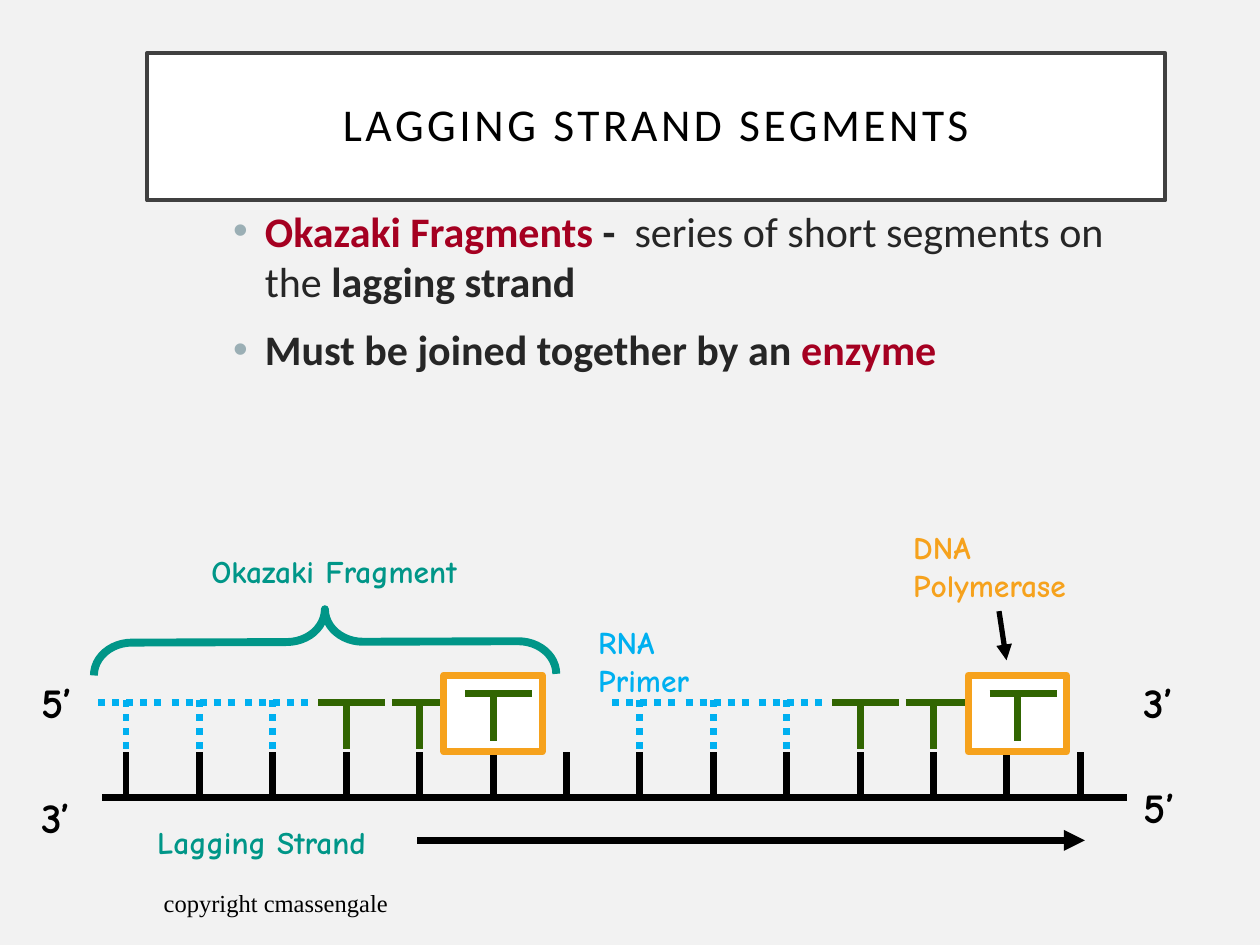
import pptx
import pptx.dml.color
import pptx.enum.dml
import pptx.enum.shapes
import pptx.enum.text
import pptx.oxml
import pptx.oxml.ns
import pptx.util
from pptx.util import Cm

BLACK, WHITE, GREY = "000000", "FFFFFF", "262626"
RED, TEAL, BLUE, GREEN, ORANGE = "A50021", "009688", "00B0F0", "316501", "F6A21D"
PITCH = 1.48  # distance between neighbouring bases, cm
BASES = 14
SHAPES = pptx.enum.shapes.MSO_SHAPE
ANCHOR = pptx.enum.text.MSO_ANCHOR


def rgb(color):
    return pptx.dml.color.RGBColor.from_string(color)


def add_child(parent, tag, **attributes):
    child = pptx.oxml.parse_xml(f"<{tag} {pptx.oxml.ns.nsdecls('a')}/>")
    for name, value in attributes.items():
        child.set(name, value)
    parent.append(child)
    return child


def add_span(para, text, size=18, font="Comic Neue", color=BLACK, bold=False, spacing=None):
    span = para.add_run()
    span.text = text
    span.font.size = pptx.util.Pt(size)
    span.font.name = font
    span.font.bold = bold
    span.font.color.rgb = rgb(color)
    if spacing:
        span.font._element.set("spc", str(spacing))


def add_box(page, left, top, width, height, wrap=True, anchor=ANCHOR.TOP):
    box = page.shapes.add_textbox(Cm(left), Cm(top), Cm(width), Cm(height))
    box.text_frame.word_wrap = wrap
    box.text_frame.vertical_anchor = anchor
    return box


def add_label(page, left, top, width, height, lines, **style):
    frame = add_box(page, left, top, width, height, wrap=False).text_frame
    frame.auto_size = pptx.enum.text.MSO_AUTO_SIZE.SHAPE_TO_FIT_TEXT
    for index, line in enumerate(lines):
        para = frame.add_paragraph() if index else frame.paragraphs[0]
        add_span(para, line, bold=True, **style)


def add_shape(page, kind, left, top, width, height, line, weight, fill=None):
    shape = page.shapes.add_shape(kind, Cm(left), Cm(top), Cm(width), Cm(height))
    shape.shadow.inherit = False
    shape.line.color.rgb = rgb(line)
    shape.line.width = pptx.util.Pt(weight)
    if fill:
        shape.fill.solid()
        shape.fill.fore_color.rgb = rgb(fill)
    else:
        shape.fill.background()
    return shape


def add_line(page, x1, y1, x2, y2, color=BLACK, weight=4, dotted=False, arrow=False):
    line = page.shapes.add_connector(
        pptx.enum.shapes.MSO_CONNECTOR.STRAIGHT, Cm(x1), Cm(y1), Cm(x2), Cm(y2))
    line.line.color.rgb = rgb(color)
    line.line.width = pptx.util.Pt(weight)
    if dotted:
        line.line.dash_style = pptx.enum.dml.MSO_LINE.ROUND_DOT
    if arrow:
        add_child(line.line._get_or_add_ln(), "a:tailEnd", type="triangle")
    add_child(line._element.spPr, "a:effectLst")


def add_title(page, left, top, width, height):
    box = add_shape(page, SHAPES.RECTANGLE, left, top, width, height, "404040", 2.5, WHITE)
    box.text_frame.vertical_anchor = ANCHOR.MIDDLE
    para = box.text_frame.paragraphs[0]
    para.alignment = pptx.enum.text.PP_ALIGN.CENTER
    para.line_spacing = 0.9
    add_span(para, "LAGGING STRAND SEGMENTS", size=26, font="Calibri", spacing=200)


def add_bullets(page, left, top, width, height):
    items = [
        [("Okazaki Fragments", RED, True), (" -", GREY, True),
         ("  series of short segments on the ", GREY, False), ("lagging strand", GREY, True)],
        [("Must be joined together by an ", GREY, True), ("enzyme", RED, True)],
    ]
    frame = add_box(page, left, top, width, height).text_frame
    for index, item in enumerate(items):
        para = frame.add_paragraph() if index else frame.paragraphs[0]
        para.space_before = pptx.util.Pt(10)
        properties = para._p.get_or_add_pPr()
        properties.set("marL", str(Cm(0.64)))
        properties.set("indent", str(-Cm(0.64)))
        add_child(add_child(properties, "a:buClr"), "a:srgbClr", val="9BAFB5")
        add_child(properties, "a:buFont", typeface="Arial")
        add_child(properties, "a:buChar", char="•")
        for text, color, bold in item:
            add_span(para, text, size=24, font="Calibri", color=color, bold=bold)


def add_template(page, left, top, width):
    """Template strand with its bases and the direction arrow below."""
    backbone = top + 0.92
    for index in range(BASES):
        x = left + 0.48 + index * PITCH
        add_line(page, x, top, x, top + 0.99)
    add_line(page, left, backbone, left + width, backbone)
    add_line(page, left + 6.35, top + 1.78, left + 19.81, top + 1.78, arrow=True)


def add_base(page, x, top, color, dotted=False):
    """T-shaped nucleotide centred on x."""
    add_line(page, x, top, x, top + 0.98, color, dotted=dotted)
    add_line(page, x - 0.56, top + 0.04, x + 0.79, top + 0.04, color, dotted=dotted)


def add_fragment(page, left, top, shift=0):
    """Three primer bases, two DNA bases, then polymerase holding a base."""
    centre = left + 0.56
    for index in range(5):
        primer = index < 3
        add_base(page, centre + index * PITCH, top + 0.51, BLUE if primer else GREEN, primer)
    held = centre + 5 * PITCH + shift
    add_shape(page, SHAPES.RECTANGLE, held - 0.99, top, 1.98, 1.55, ORANGE, 4, WHITE)
    add_base(page, held, top + 0.34, GREEN)


def add_brace(page, left, top, width, height):
    # The frame is given unrotated, then turned so that the point faces up
    brace = add_shape(page, SHAPES.LEFT_BRACE, left, top, width, height, TEAL, 4.5)
    brace.adjustments[0] = 0.583
    brace.adjustments[1] = 0.5
    brace.rotation = 89.8


def add_annotations(page, left, top):
    """Strand-end marks, names of the parts and the polymerase pointer."""
    for x, y, mark in [(0, 3, "5’"), (0, 5.31, "3’"), (22.23, 3, "3’"), (22.23, 5.11, "5’")]:
        add_label(page, left + x, top + y, 1.22, 1.28, [mark], size=24)
    names = [
        (2.34, 5.95, 5.11, 1.03, ["Lagging Strand"], TEAL),
        (3.43, 0.49, 6.05, 1.03, ["Okazaki Fragment"], TEAL),
        (11.23, 1.91, 2.49, 1.78, ["RNA", "Primer"], BLUE),
        (17.58, 0, 3.89, 1.78, ["DNA", "Polymerase"], ORANGE),
    ]
    for x, y, width, height, lines, color in names:
        add_label(page, left + x, top + y, width, height, lines, color=color)
    add_line(page, left + 19.56, top + 1.8, left + 19.71, top + 2.79, weight=3, arrow=True)


def add_footer(page, left, top, width, height):
    box = add_box(page, left, top, width, height, anchor=ANCHOR.MIDDLE)
    add_span(box.text_frame.paragraphs[0], "copyright cmassengale",
             size=14, font="Times New Roman")


def main():
    deck = pptx.Presentation()
    deck.slide_width, deck.slide_height = Cm(25.4), Cm(19.05)
    page = deck.slides.add_slide(deck.slide_layouts[6])
    page.background.fill.solid()
    page.background.fill.fore_color.rgb = rgb("F2F2F2")

    add_title(page, 2.97, 1.07, 20.52, 2.97)
    add_bullets(page, 4.45, 4.01, 18.85, 11.43)
    add_template(page, 2.06, 15.16, 20.65)
    add_fragment(page, 1.98, 13.61)
    add_fragment(page, 1.98 + 7 * PITCH, 13.61, shift=0.21)
    add_brace(page, 5.89, 8.28, 1.32, 9.32)
    add_annotations(page, 0.58, 10.52)
    add_footer(page, 3.05, 17.75, 12.65, 0.89)
    deck.save("out.pptx")


if __name__ == "__main__":
    main()
